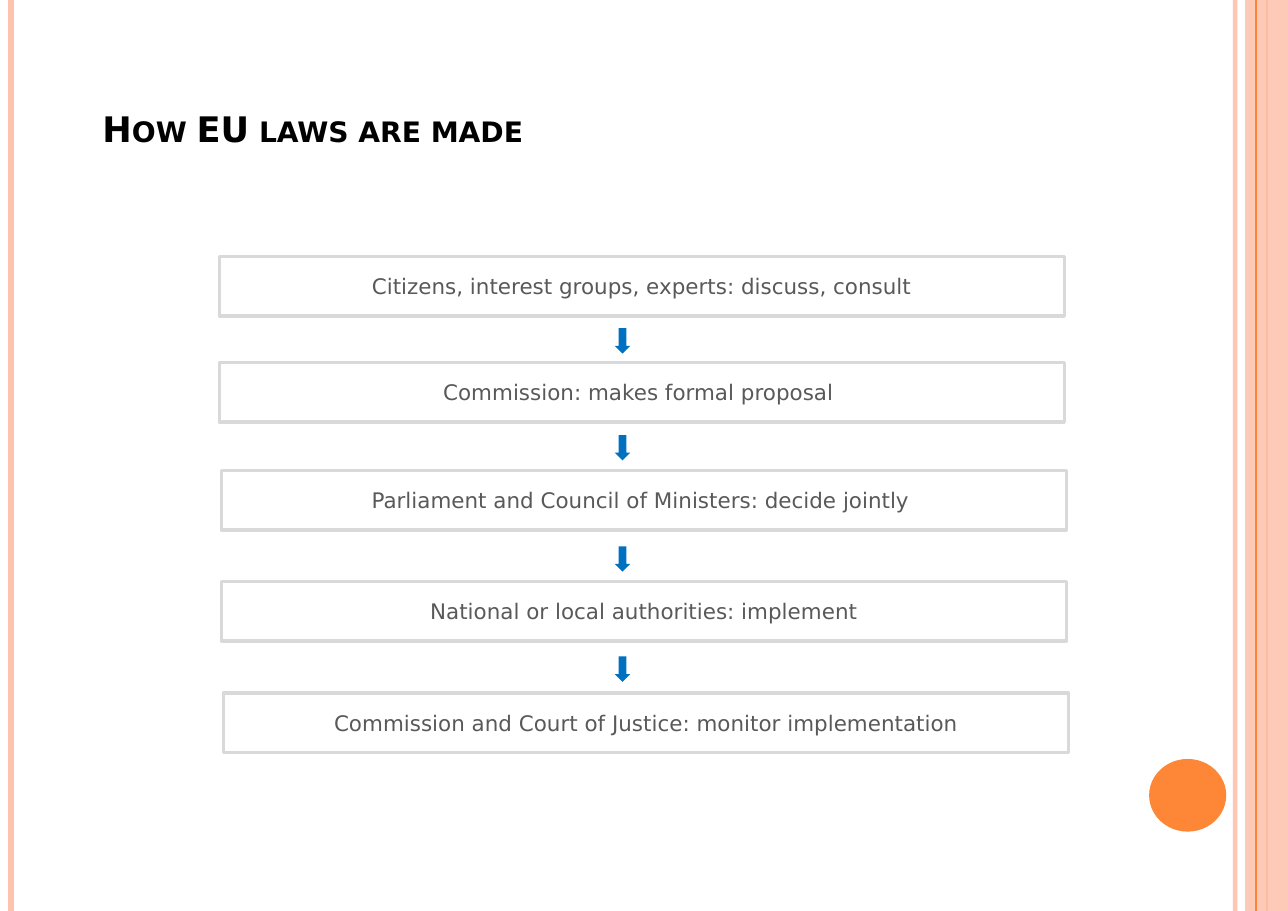
from dataclasses import dataclass

from lxml import etree
from pptx import Presentation
from pptx.dml.color import RGBColor
from pptx.enum.shapes import MSO_CONNECTOR, MSO_SHAPE
from pptx.enum.text import MSO_ANCHOR, PP_ALIGN
from pptx.oxml.ns import qn
from pptx.util import Inches, Pt

STRAIGHT = MSO_CONNECTOR.STRAIGHT
RECTANGLE = MSO_SHAPE.RECTANGLE
OVAL = MSO_SHAPE.OVAL
DOWN_ARROW = MSO_SHAPE.DOWN_ARROW
BOTTOM, MIDDLE = MSO_ANCHOR.BOTTOM, MSO_ANCHOR.MIDDLE
LEFT, CENTER = PP_ALIGN.LEFT, PP_ALIGN.CENTER

SLIDE_WIDTH, SLIDE_HEIGHT = 11.69, 8.27
STEP_WIDTH, STEP_HEIGHT = 7.67, 0.54

# Left, top and wording of each stage
STEPS = [
    (1.99, 2.33, "Citizens, interest groups, experts: discuss, consult"),
    (1.99, 3.29, "Commission: makes formal proposal "),
    (2.01, 4.27, "Parliament and Council of Ministers: decide jointly "),
    (2.01, 5.28, "National or local authorities: implement"),
    (2.03, 6.29, "Commission and Court of Justice: monitor implementation"),
]
ARROW_TOPS = [2.98, 3.95, 4.96, 5.96]


@dataclass(frozen=True)
class Theme:
    font: str = "DejaVu Sans"
    title_size: float = 23
    step_size: float = 14
    title: str = "000000"
    step_text: str = "595959"
    step_fill: str = "FFFFFF"
    step_border: str = "D9D9D9"
    arrow: str = "0070C0"
    peach: str = "FEC3AE"
    orange: str = "FE8637"


class SlideBuilder:
    def __init__(self, slide, theme):
        self.slide = slide
        self.theme = theme

    def set_opacity(self, properties, percent):
        """Add an alpha value to every RGB colour below an XML element."""
        for color in properties.iter(qn("a:srgbClr")):
            alpha = etree.SubElement(color, qn("a:alpha"))
            alpha.set("val", str(percent * 1000))

    def vertical_rule(self, x, color, width, opacity=100):
        rule = self.slide.shapes.add_connector(
            STRAIGHT, Inches(x), 0, Inches(x), Inches(SLIDE_HEIGHT))
        rule.line.color.rgb = RGBColor.from_string(color)
        rule.line.width = Pt(width)
        properties = rule.element.spPr
        if opacity < 100:
            self.set_opacity(properties, opacity)
        etree.SubElement(properties, qn("a:effectLst"))

    def shape(self, kind, left, top, width, height, fill, border=None, opacity=100):
        shape = self.slide.shapes.add_shape(
            kind, Inches(left), Inches(top), Inches(width), Inches(height))
        shape.shadow.inherit = False
        shape.fill.solid()
        shape.fill.fore_color.rgb = RGBColor.from_string(fill)
        if opacity < 100:
            self.set_opacity(shape.element.spPr, opacity)
        if border:
            shape.line.color.rgb = RGBColor.from_string(border)
            shape.line.width = Pt(2.25)
        else:
            shape.line.fill.background()
        return shape

    def add_text(self, shape, text, size, color, anchor, alignment, bold=False):
        frame = shape.text_frame
        frame.word_wrap = True
        frame.vertical_anchor = anchor
        frame.margin_left = frame.margin_right = Inches(0.11)
        frame.margin_top = frame.margin_bottom = Inches(0.06)
        paragraph = frame.paragraphs[0]
        paragraph.alignment = alignment
        run = paragraph.add_run()
        run.text = text
        paragraph.font.name = self.theme.font
        paragraph.font.size = Pt(size)
        paragraph.font.bold = bold
        paragraph.font.color.rgb = RGBColor.from_string(color)
        return run

    def title(self, text):
        box = self.slide.shapes.add_textbox(
            Inches(0.82), Inches(0.55), Inches(10.09), Inches(0.87))
        run = self.add_text(box, text, self.theme.title_size, self.theme.title,
                            BOTTOM, LEFT, bold=True)
        run._r.get_or_add_rPr().set("cap", "small")

    def step(self, left, top, text):
        box = self.shape(RECTANGLE, left, top, STEP_WIDTH, STEP_HEIGHT,
                         self.theme.step_fill, self.theme.step_border)
        self.add_text(box, text, self.theme.step_size, self.theme.step_text,
                      MIDDLE, CENTER)

    def arrow(self, top):
        self.shape(DOWN_ARROW, 5.58, top, 0.14, 0.23, self.theme.arrow)

    def decoration(self):
        peach, orange = self.theme.peach, self.theme.orange
        self.vertical_rule(11.21, peach, 3, opacity=93)
        self.vertical_rule(0.1, peach, 4.5)
        self.vertical_rule(11.5, orange, 1.5)
        self.shape(RECTANGLE, 11.3, 0, 0.39, SLIDE_HEIGHT, peach, opacity=87)
        self.vertical_rule(11.4, orange, 0.75)
        self.shape(OVAL, 10.43, 6.89, 0.7, 0.66, orange)


def main():
    presentation = Presentation()
    presentation.slide_width = Inches(SLIDE_WIDTH)
    presentation.slide_height = Inches(SLIDE_HEIGHT)
    slide = presentation.slides.add_slide(presentation.slide_layouts[6])

    builder = SlideBuilder(slide, Theme())
    builder.decoration()
    builder.title("How EU laws are made")
    for left, top, text in STEPS:
        builder.step(left, top, text)
    for top in ARROW_TOPS:
        builder.arrow(top)

    presentation.save("out.pptx")


if __name__ == "__main__":
    main()
